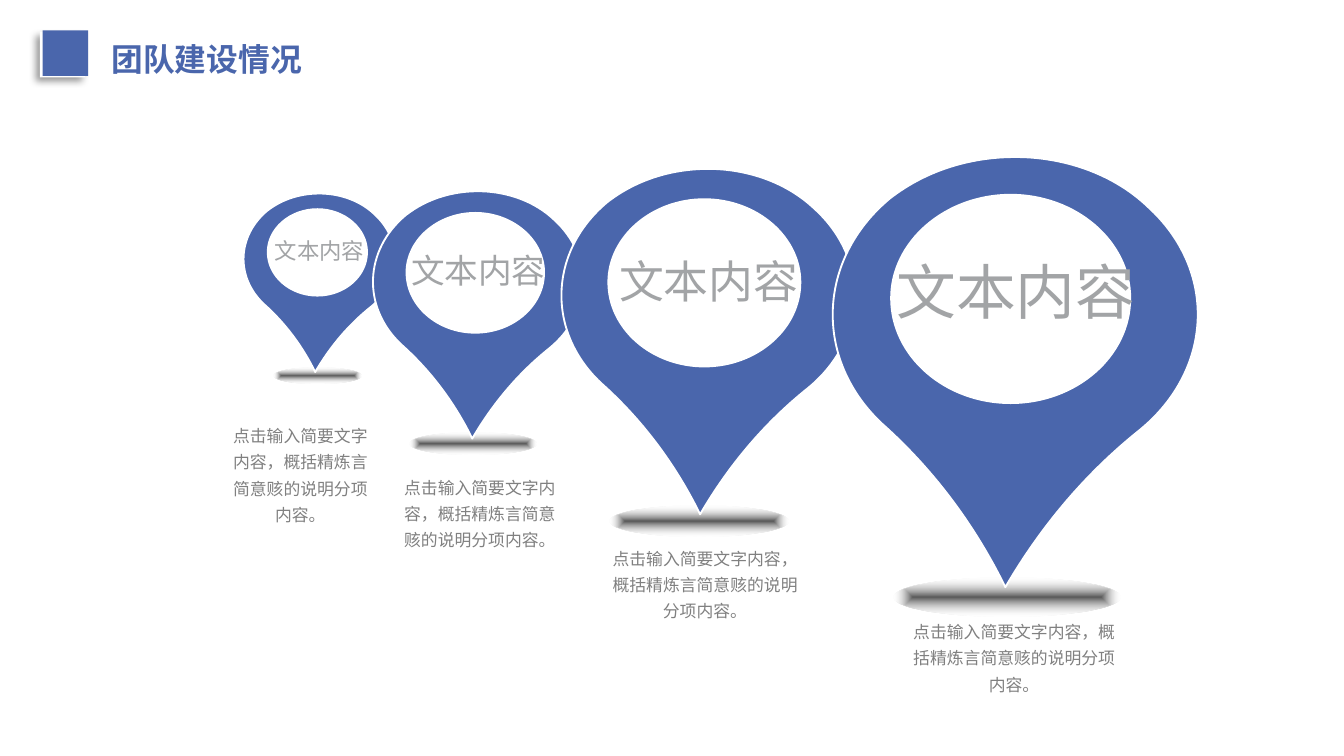
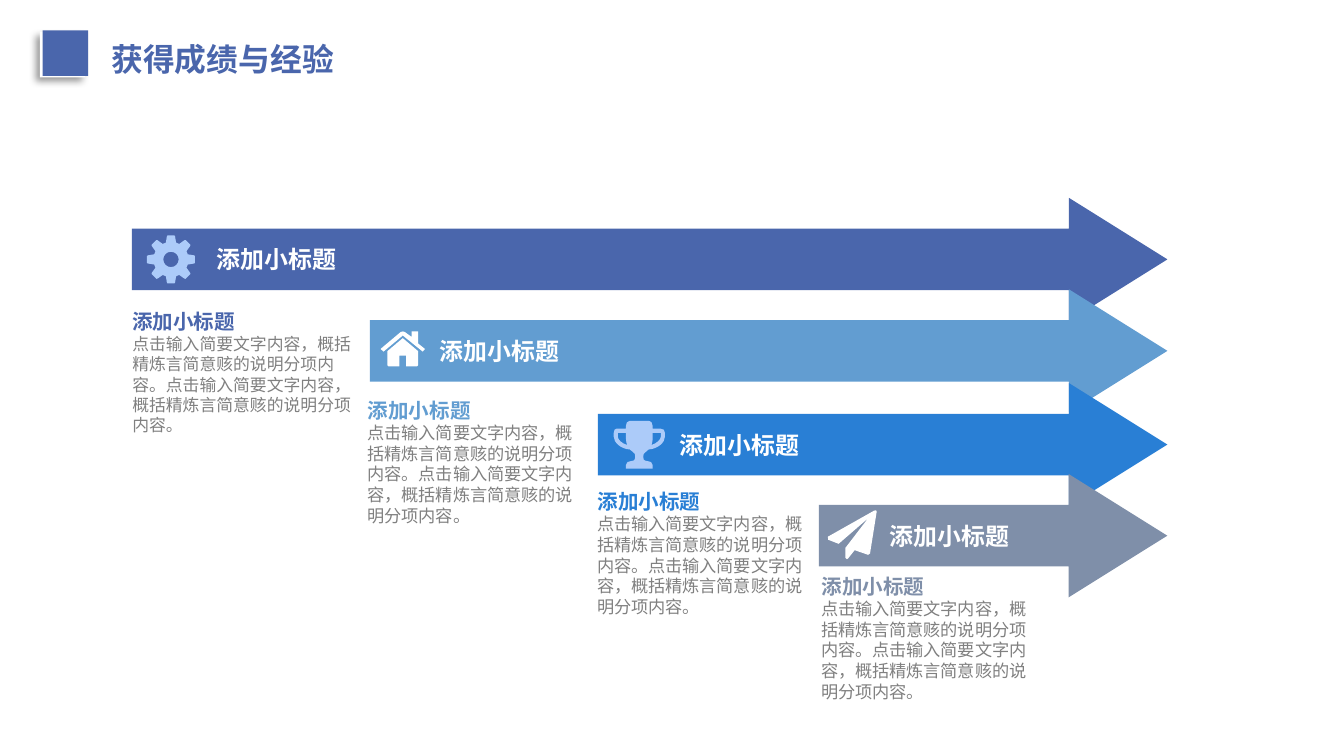
import math

from lxml import etree
from pptx import Presentation
from pptx.dml.color import RGBColor
from pptx.enum import shapes, text
from pptx.oxml import parse_xml
from pptx.util import Pt

BLUE = RGBColor(0x4A, 0x66, 0xAC)
SKY = RGBColor(0x62, 0x9D, 0xD1)
BRIGHT = RGBColor(0x29, 0x7F, 0xD5)
SLATE = RGBColor(0x7F, 0x8F, 0xA9)
PALE = RGBColor(0xAC, 0xCB, 0xF9)
WHITE = RGBColor(0xFF, 0xFF, 0xFF)
GREY = RGBColor(0x80, 0x80, 0x80)
LABEL_GREY = RGBColor(0xA2, 0xA4, 0xA6)
NAMESPACE = "http://schemas.openxmlformats.org/drawingml/2006/main"
SENTENCE = "点击输入简要文字内容，概括精炼言简意赅的说明分项内容。"
SUBTITLE = "添加小标题"

PIN = (195.8, 230.4), [
    [(95, 20.2), (59.8, 20.2, 31, 45.4, 31, 75.6), (31, 106.6, 59.8, 131.8, 95, 131.8),
     (130.3, 131.8, 159.1, 106.6, 159.1, 75.6), (159.1, 45.4, 130.3, 20.2, 95, 20.2)],
    [(100.8, 0), (125.3, 0.7, 150.5, 9.4, 168.5, 26.6), (205.9, 60.5, 203.8, 113.8, 164.2, 146.2),
     (135.4, 169.2, 111.6, 197.3, 92.2, 230.4), (75.6, 196.6, 53.3, 167, 25.9, 142.6),
     (-10.8, 108, -8.6, 54.7, 30.2, 22.3), (50.4, 6.5, 75.6, -0.7, 100.8, 0)],
]
HOUSE = (23.8, 18.7), [
    [(0, 9.4), (10.8, 0.3), (11.9, 0), (13, 0.3), (16.6, 2.9), (16.6, 0), (20.2, 0),
     (20.2, 6.5), (23.8, 9.4), (22.6, 10.8), (11.9, 2.2), (1.6, 10.8)],
    [(20.2, 18), (19.5, 18.7), (13.7, 18.7), (13.7, 13), (10.1, 13), (10.1, 18.7),
     (4.3, 18.7), (3.6, 18), (3.6, 10.6), (11.9, 3.6), (20.2, 10.6)],
]
PLANE = (26.2, 26.2), [
    [(26.2, 0.7), (22.6, 23.2), (21.6, 23.9), (14.4, 21.4), (10.8, 25.9), (10.1, 26.2),
     (9.4, 25.4), (9.4, 20.2), (21.6, 4.3), (5.8, 18), (0.2, 15.8), (0, 14.2),
     (24.8, 0.2), (25.9, 0)],
]
TROPHY = (27.4, 25.6), [
    [(27.4, 8.6), (27.4, 11.5, 23.8, 15.1, 18.7, 15.4), (17.3, 16.6),
     (16, 17.3, 15.8, 18, 15.8, 19.4), (15.8, 20.2, 15.8, 21.6, 18, 21.6),
     (19.4, 21.6, 20.9, 22.3, 20.9, 23.8), (20.9, 25.6), (6.5, 25.6), (6.5, 23.8),
     (6.5, 22.3, 7.9, 21.6, 9.4, 21.6), (11.5, 21.6, 11.5, 20.2, 11.5, 19.4),
     (11.5, 18, 11.5, 17.3, 10.1, 16.6), (8.6, 15.4), (3.6, 15.1, 0, 11.5, 0, 8.6),
     (0, 6.5), (0, 5, 0.7, 4.3, 1.4, 4.3), (6.5, 4.3), (6.5, 2.9),
     (6.5, 1.4, 7.2, 0, 8.6, 0), (18, 0), (20.2, 0, 20.9, 1.4, 20.9, 2.9),
     (20.9, 4.3), (25.2, 4.3), (26.6, 4.3, 27.4, 5, 27.4, 6.5)],
    [(6.5, 6.5), (2.2, 6.5), (2.2, 8.6), (2.2, 10, 4.3, 12.2, 7.2, 13),
     (6.5, 11.5, 6.5, 9.4, 6.5, 6.5)],
    [(25.2, 6.5), (20.9, 6.5), (20.9, 9.4, 20.9, 11.5, 20.2, 13),
     (23, 12.2, 25.2, 10, 25.2, 8.6)],
]
teeth = [(math.radians(45 * tooth + angle), radius) for tooth in range(8)
         for angle, radius in ((-17, 9.4), (-10, 12.6), (-8, 13), (8, 13), (10, 12.6), (17, 9.4))]
GEAR = (26, 26), [
    [(13 + radius * math.cos(angle), 13 + radius * math.sin(angle)) for angle, radius in teeth],
    [(13, 8.9), (10.7, 8.9, 8.9, 10.7, 8.9, 13), (8.9, 15.3, 10.7, 17.1, 13, 17.1),
     (15.3, 17.1, 17.1, 15.3, 17.1, 13), (17.1, 10.7, 15.3, 8.9, 13, 8.9)],
]


def add_outline(slide, outline, left, top, colour, scale=1):
    (width, height), contours = outline
    builder = slide.shapes.build_freeform(*map(Pt, contours[0][0]), scale=1.0)
    for index, contour in enumerate(contours):
        if index:
            builder.move_to(*map(Pt, contour[0]))
        builder.add_line_segments([tuple(map(Pt, step[-2:])) for step in contour[1:]], close=True)
    shape = builder.convert_to_shape()
    shape.left, shape.top = Pt(left), Pt(top)
    shape.width, shape.height = Pt(width * scale), Pt(height * scale)
    route = next(shape._element.iter(f"{{{NAMESPACE}}}path"))
    route.set("w", str(Pt(width)))
    route.set("h", str(Pt(height)))
    segments = [segment for segment in route if len(segment)]
    steps = [step for contour in contours for step in contour]
    for segment, step in zip(segments, steps):
        if len(step) == 6:
            curve = etree.Element(f"{{{NAMESPACE}}}cubicBezTo")
            route.replace(segment, curve)
            for _ in range(3):
                etree.SubElement(curve, f"{{{NAMESPACE}}}pt")
            segment = curve
        for point, x, y in zip(segment, step[::2], step[1::2]):
            point.set("x", str(Pt(x)))
            point.set("y", str(Pt(y)))
    shape.shadow.inherit = False
    shape.fill.solid()
    shape.fill.fore_color.rgb = colour
    shape.line.fill.background()
    return shape


def write(shape, lines, align=text.PP_ALIGN.LEFT, spacing=None, margins=None, grow=False):
    frame = shape.text_frame
    frame.word_wrap = True
    if grow:
        frame.auto_size = text.MSO_AUTO_SIZE.SHAPE_TO_FIT_TEXT
    if margins:
        frame.margin_left, frame.margin_top, frame.margin_right, frame.margin_bottom = map(Pt, margins)
    frame.text = "\n".join(line[0] for line in lines)
    for paragraph, (_, size, colour, bold) in zip(frame.paragraphs, lines):
        paragraph.alignment = align
        if spacing:
            paragraph.line_spacing = spacing
        font = paragraph.runs[0].font
        font.name = "Arial"
        font.size = Pt(size)
        font.bold = bold
        font.color.rgb = colour
    return frame


presentation = Presentation()
presentation.slide_width = Pt(720)
presentation.slide_height = Pt(405)
slides = []

for title in ("团队建设情况", "获得成绩与经验"):
    slide = presentation.slides.add_slide(presentation.slide_layouts[6])
    slides.append(slide)
    box = slide.shapes.add_textbox(Pt(52.6), Pt(13.4), Pt(341.3), Pt(30.2))
    write(box, [(title, 17.07, BLUE, True)], spacing=1.2, grow=True)
    for left, top, colour in ((21.4, 17, WHITE), (22.8, 16.2, BLUE)):
        square = slide.shapes.add_shape(shapes.MSO_SHAPE.RECTANGLE, Pt(left), Pt(top), Pt(24.4), Pt(24.4))
        square.shadow.inherit = False
        square.fill.solid()
        square.fill.fore_color.rgb = colour
        square.line.fill.background()
        if colour == WHITE:
            effects = square._element.spPr.find(f"{{{NAMESPACE}}}effectLst")
            shadow = etree.SubElement(effects, f"{{{NAMESPACE}}}outerShdw", blurRad=str(Pt(4)),
                                      dist=str(Pt(3)), dir="8100000", algn="tr", rotWithShape="0")
            shade = etree.SubElement(shadow, f"{{{NAMESPACE}}}srgbClr", val="000000")
            etree.SubElement(shade, f"{{{NAMESPACE}}}alpha", val="40000")

team_slide, results_slide = slides

captions = [(479.1, 326.4, 128.2, 80.6), (320.4, 287.1, 114.5, 92.9),
            (208.4, 249.1, 97.2, 92.9), (117.7, 221.3, 86.4, 92.9)]
for place in captions:
    box = team_slide.shapes.add_textbox(*map(Pt, place))
    write(box, [(SENTENCE, 9, GREY, False)], align=text.PP_ALIGN.CENTER, spacing=1.3)

ground_shadows = [(146.4, 197, 47.5, 8.6), (219.6, 231.8, 67.7, 11.5),
                  (326.8, 271, 95.8, 16.6), (479, 309.6, 121, 20.9)]
for place in ground_shadows:
    ellipse = team_slide.shapes.add_shape(shapes.MSO_SHAPE.OVAL, *map(Pt, place))
    ellipse.shadow.inherit = False
    ellipse.line.fill.background()
    gradient = parse_xml(
        f'<a:gradFill xmlns:a="{NAMESPACE}" rotWithShape="1"><a:gsLst>'
        '<a:gs pos="0"><a:srgbClr val="595959"/></a:gs>'
        '<a:gs pos="100000"><a:srgbClr val="F2F2F2"><a:alpha val="0"/></a:srgbClr></a:gs></a:gsLst>'
        '<a:path path="shape"><a:fillToRect l="50000" t="50000" r="50000" b="50000"/></a:path>'
        '</a:gradFill>')
    ellipse._element.spPr.find(f"{{{NAMESPACE}}}prstGeom").addnext(gradient)

pins = [(130.6, 103.7, 0.415, 12, 34.2), (200, 102.5, 0.575, 18, 48.2),
        (301, 90.5, 0.803, 24, 65.5), (446.4, 84.2, 1, 32, 87.8)]
for left, top, scale, size, bottom in pins:
    pin = add_outline(team_slide, PIN, left, top, BLUE, scale)
    pin.line.color.rgb = WHITE
    pin.line.width = Pt(1)
    frame = write(pin, [("文本内容", size, LABEL_GREY, False)], align=text.PP_ALIGN.CENTER,
                  margins=(0, 0, 0, bottom))
    frame.vertical_anchor = text.MSO_ANCHOR.MIDDLE

arrow_right = 625.4
results = [
    (70.7, 106, BLUE, 116, (70.9, 165.6), 9, GEAR, (78.6, 126), PALE),
    (198.2, 155, SKY, 235.4, (197.1, 213.3), 9.15, HOUSE, (203.9, 177.6), WHITE),
    (320.3, 205.2, BRIGHT, 364.2, (320.2, 262.1), 9.15, TROPHY, (328.8, 225.4), PALE),
    (438.7, 254, SLATE, 476.6, (440.2, 307.6), 9.15, PLANE, (443.5, 273.4), WHITE),
]
for left, top, colour, label_left, note, size, icon, icon_place, icon_colour in results:
    arrow = results_slide.shapes.add_shape(shapes.MSO_SHAPE.RIGHT_ARROW, Pt(left), Pt(top),
                                           Pt(arrow_right - left), Pt(66))
    arrow.shadow.inherit = False
    arrow.adjustments[0] = 0.5
    arrow.adjustments[1] = 0.8
    arrow.fill.solid()
    arrow.fill.fore_color.rgb = colour
    arrow.line.fill.background()

    label = results_slide.shapes.add_textbox(Pt(label_left), Pt(top + 25), Pt(66), Pt(15.8))
    frame = write(label, [(SUBTITLE, 12.8, WHITE, True)], margins=(0, 0, 0, 0), grow=True)
    frame.word_wrap = False
    frame.vertical_anchor = text.MSO_ANCHOR.MIDDLE
    frame.paragraphs[0].space_before = Pt(2.56)

    box = results_slide.shapes.add_textbox(Pt(note[0]), Pt(note[1]), Pt(117.4), Pt(68.4))
    frame = write(box, [(SUBTITLE, 11, colour, True), (SENTENCE * 2, size, GREY, False)],
                  margins=(0, 0, 0, 0), grow=True)
    frame.paragraphs[1]._p.get_or_add_pPr().set("hangingPunct", "0")
    add_outline(results_slide, icon, *icon_place, icon_colour)

presentation.save("out.pptx")
